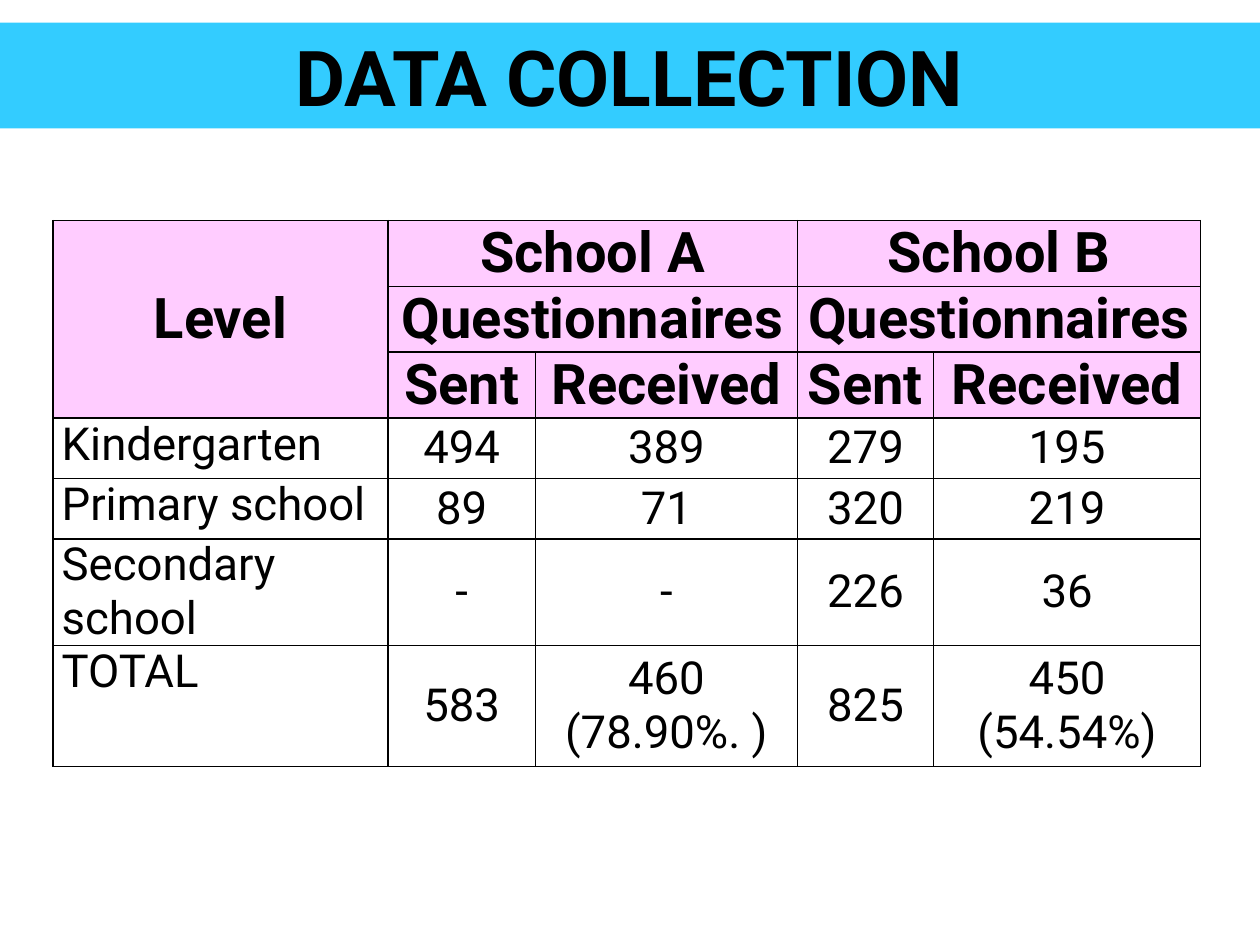
from typing import NamedTuple

import pptx
import pptx.dml.color
import pptx.enum.shapes
import pptx.enum.text
import pptx.oxml
import pptx.oxml.ns
import pptx.util

Inches = pptx.util.Inches
ALIGN = pptx.enum.text.PP_ALIGN
ANCHOR = pptx.enum.text.MSO_ANCHOR

COLORS = {"banner": "33CCFF", "header": "FFCCFF", "ink": "000000"}
FONT = "Roboto"
SLIDE_W, SLIDE_H = Inches(10), Inches(7.5)

COLUMN_WIDTHS = [2.66, 1.17, 2.08, 1.08, 2.12, 0.21]
ROW_UNIT = 0.48
ROW_UNITS = [1, 1, 1, 1, 1, 1, 2]
HEADER_ROWS = 3
MARGIN_COLUMN = len(COLUMN_WIDTHS) - 1


class Heading(NamedTuple):
    text: str
    row: int
    column: int
    row_span: int = 1
    column_span: int = 1


class LevelCounts(NamedTuple):
    level: str
    sent_a: str
    received_a: str
    sent_b: str
    received_b: str


HEADINGS = [Heading("Level", 0, 0, row_span=HEADER_ROWS)]
for first_column, school in ((1, "School A"), (3, "School B")):
    HEADINGS += [
        Heading(school, 0, first_column, column_span=2),
        Heading("Questionnaires", 1, first_column, column_span=2),
        Heading("Sent", 2, first_column),
        Heading("Received", 2, first_column + 1),
    ]

COUNTS = [
    LevelCounts("Kindergarten", "494", "389", "279", "195"),
    LevelCounts("Primary school", "89", "71", "320", "219"),
    LevelCounts("Secondary school", "-", "-", "226", "36"),
    LevelCounts("TOTAL", "583", "460 (78.90%. )", "825", "450 (54.54%)"),
]


def rgb(name: str) -> pptx.dml.color.RGBColor:
    return pptx.dml.color.RGBColor.from_string(COLORS[name])


def write(frame, text: str, *, size: int, bold: bool = False, align=ALIGN.CENTER) -> None:
    paragraph = frame.paragraphs[0]
    paragraph.alignment = align
    run = paragraph.add_run()
    run.text = text
    run.font.name = FONT
    run.font.size = pptx.util.Pt(size)
    run.font.bold = bold
    run.font.color.rgb = rgb("ink")


def set_borders(cell, inked_sides: str) -> None:
    """Draw the named sides (of L, R, T, B) in ink and leave the others empty."""
    properties = cell._tc.get_or_add_tcPr()
    for position, side in enumerate("LRTB"):
        paint = (
            f'<a:solidFill><a:srgbClr val="{COLORS["ink"]}"/></a:solidFill>'
            if side in inked_sides else "<a:noFill/>"
        )
        line = f'<a:ln{side} {pptx.oxml.ns.nsdecls("a")} w="12700">{paint}</a:ln{side}>'
        properties.insert(position, pptx.oxml.parse_xml(line))


def add_banner(slide, text: str) -> None:
    banner = slide.shapes.add_shape(
        pptx.enum.shapes.MSO_SHAPE.RECTANGLE, 0, Inches(0.18), SLIDE_W, Inches(0.84))
    banner.shadow.inherit = False
    banner.fill.solid()
    banner.fill.fore_color.rgb = rgb("banner")
    banner.line.fill.background()
    banner.text_frame.word_wrap = True
    banner.text_frame.vertical_anchor = ANCHOR.MIDDLE
    write(banner.text_frame, text, size=44, bold=True)


def style_cell(cell, row: int, column: int) -> None:
    cell.margin_left = cell.margin_right = Inches(0.07)
    cell.margin_top = cell.margin_bottom = 0
    if row < HEADER_ROWS and column != MARGIN_COLUMN:
        cell.fill.solid()
        cell.fill.fore_color.rgb = rgb("header")
    else:
        cell.fill.background()
    set_borders(cell, "L" if column == MARGIN_COLUMN else "LRTB")


def add_counts_table(slide) -> None:
    table = slide.shapes.add_table(
        len(ROW_UNITS), len(COLUMN_WIDTHS), Inches(0.42), Inches(1.75),
        Inches(sum(COLUMN_WIDTHS)), Inches(ROW_UNIT * sum(ROW_UNITS))).table
    table.first_row = table.horz_banding = False
    for column, width in zip(table.columns, COLUMN_WIDTHS):
        column.width = Inches(width)
    for row, units in zip(table.rows, ROW_UNITS):
        row.height = Inches(ROW_UNIT * units)
    for row in range(len(ROW_UNITS)):
        for column in range(len(COLUMN_WIDTHS)):
            style_cell(table.cell(row, column), row, column)

    table.cell(0, MARGIN_COLUMN).merge(table.cell(1, MARGIN_COLUMN))
    for heading in HEADINGS:
        cell = table.cell(heading.row, heading.column)
        if heading.row_span * heading.column_span > 1:
            cell.merge(table.cell(heading.row + heading.row_span - 1,
                                  heading.column + heading.column_span - 1))
        if heading.row_span > 1:
            cell.vertical_anchor = ANCHOR.MIDDLE
        write(cell.text_frame, heading.text, size=32, bold=True)

    for row, counts in enumerate(COUNTS, start=HEADER_ROWS):
        for column, text in enumerate(counts):
            cell = table.cell(row, column)
            is_level = column == 0
            cell.vertical_anchor = ANCHOR.TOP if is_level else ANCHOR.MIDDLE
            write(cell.text_frame, text, size=26,
                  align=ALIGN.JUSTIFY if is_level else ALIGN.CENTER)


def main() -> None:
    presentation = pptx.Presentation()
    presentation.slide_width, presentation.slide_height = SLIDE_W, SLIDE_H
    slide = presentation.slides.add_slide(presentation.slide_layouts[6])
    add_banner(slide, "DATA COLLECTION")
    add_counts_table(slide)
    presentation.save("out.pptx")


if __name__ == "__main__":
    main()
